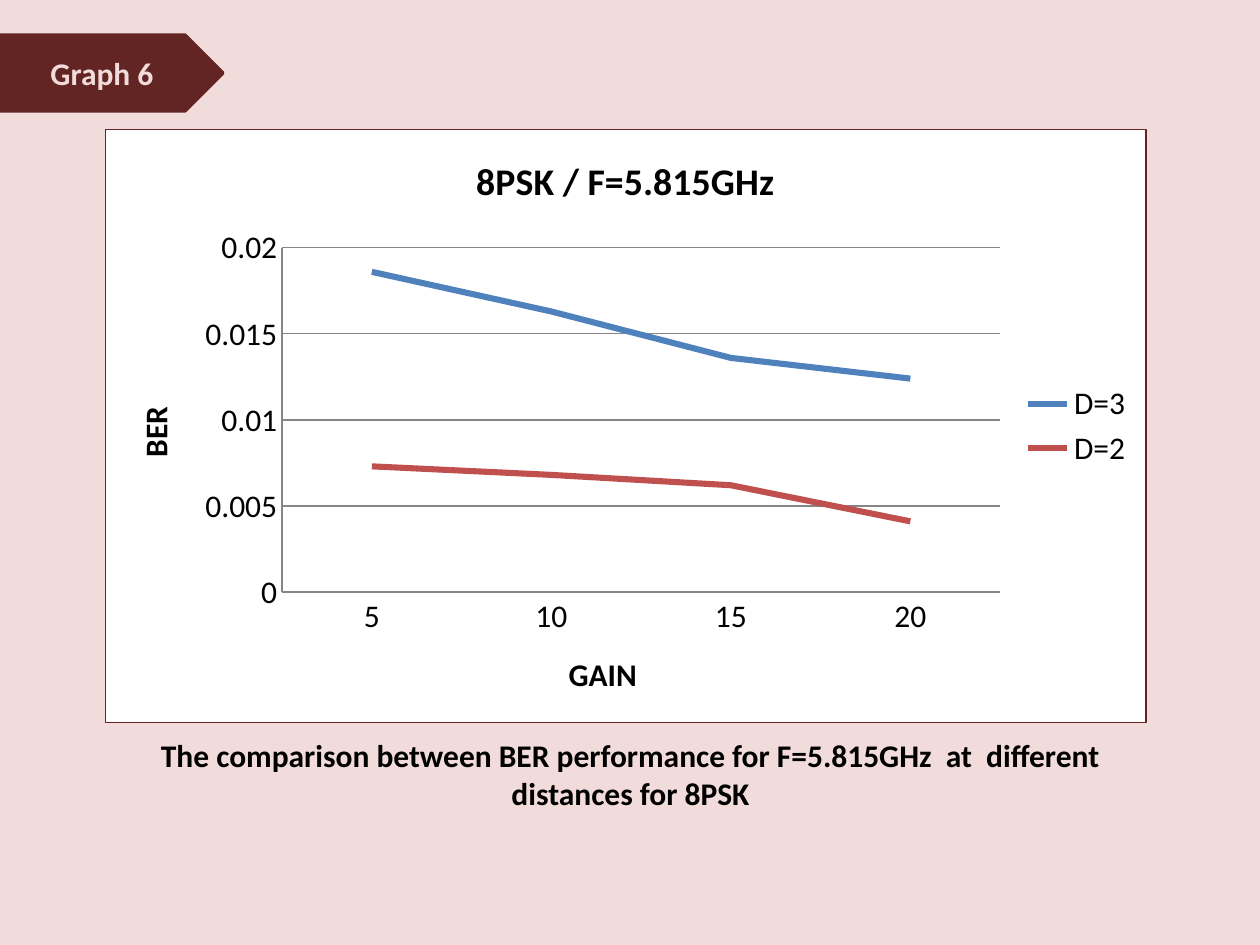
from lxml import etree
from pptx import Presentation
from pptx.chart.data import CategoryChartData
from pptx.dml.color import RGBColor
from pptx.enum.chart import XL_CHART_TYPE, XL_LEGEND_POSITION, XL_TICK_MARK
from pptx.enum.shapes import MSO_SHAPE
from pptx.enum.text import MSO_ANCHOR, PP_ALIGN
from pptx.oxml import parse_xml
from pptx.oxml.ns import nsdecls, qn
from pptx.util import Inches, Pt

FONT = "Calibri"
PINK = RGBColor(0xF2, 0xDC, 0xDB)
MAROON = RGBColor(0x63, 0x25, 0x23)
BLACK = RGBColor(0, 0, 0)
WHITE = RGBColor(0xFF, 0xFF, 0xFF)
GRAY = RGBColor(0x86, 0x86, 0x86)
BLUE = RGBColor(0x4F, 0x81, 0xBD)
RED = RGBColor(0xC0, 0x50, 0x4D)

GAINS = ["5", "10", "15", "20"]
SERIES = [
    ("D=3", [0.0186, 0.0163, 0.0136, 0.0124], BLUE),
    ("D=2", [0.0073, 0.0068, 0.0062, 0.0041], RED),
]


def style_font(font, color=BLACK, size=18, bold=True):
    font.name = FONT
    font.size = Pt(size)
    font.bold = bold
    font.color.rgb = color


def write(frame, text, color):
    frame.word_wrap = True
    para = frame.paragraphs[0]
    para.alignment = PP_ALIGN.CENTER
    span = para.add_run()
    span.text = text
    style_font(span.font, color)


def add_block(page, kind, left, top, width, height, fill):
    block = page.shapes.add_shape(
        kind, Inches(left), Inches(top), Inches(width), Inches(height))
    block.shadow.inherit = False
    block.fill.solid()
    block.fill.fore_color.rgb = fill
    block.line.fill.background()
    return block


def add_tag(page, text):
    tag = add_block(page, MSO_SHAPE.PENTAGON, 0, 0.28, 1.77, 0.6, MAROON)
    tag.line.color.rgb = MAROON
    tag.line.width = Pt(2)
    tag.text_frame.vertical_anchor = MSO_ANCHOR.MIDDLE
    write(tag.text_frame, text, PINK)


def add_caption(page, text):
    box = page.shapes.add_textbox(
        Inches(0.87), Inches(5.79), Inches(8.27), Inches(0.75))
    write(box.text_frame, text, BLACK)


def set_title(owner, text, size=18):
    frame = (owner.chart_title if hasattr(owner, "chart_title")
             else owner.axis_title).text_frame
    span = frame.paragraphs[0].add_run()
    span.text = text
    style_font(span.font, size=size)


def style_axis(axis, title):
    axis.major_tick_mark = XL_TICK_MARK.NONE
    axis.minor_tick_mark = XL_TICK_MARK.NONE
    axis.format.line.color.rgb = GRAY
    style_font(axis.tick_labels.font, bold=False)
    set_title(axis, title)


def frame_chart(chart):
    """Give the chart area its white fill and thin border."""
    area = parse_xml(
        f'<c:spPr {nsdecls("c", "a")}>'
        f'<a:solidFill><a:srgbClr val="{WHITE}"/></a:solidFill>'
        f'<a:ln w="{Pt(0.75)}"><a:solidFill><a:srgbClr val="{MAROON}"/>'
        '</a:solidFill></a:ln></c:spPr>')
    chart.element.find(qn("c:chart")).addnext(area)


def place_plot(chart, **shares):
    """Fix the inner plot area as shares of the chart's size."""
    plot_area = chart.element.find(qn("c:chart")).find(qn("c:plotArea"))
    for old in plot_area.findall(qn("c:layout")):
        plot_area.remove(old)
    layout = etree.Element(qn("c:layout"))
    manual = etree.SubElement(layout, qn("c:manualLayout"))
    settings = {"layoutTarget": "inner", "xMode": "edge", "yMode": "edge", **shares}
    for name, value in settings.items():
        etree.SubElement(manual, qn(f"c:{name}")).set("val", str(value))
    plot_area.insert(0, layout)


def add_ber_chart(page):
    data = CategoryChartData()
    data.categories = GAINS
    for name, values, _ in SERIES:
        data.add_series(name, values)
    chart = page.shapes.add_chart(
        XL_CHART_TYPE.LINE, Inches(0.83), Inches(1.02),
        Inches(8.27), Inches(4.72), data).chart
    style_font(chart.font, bold=False)
    frame_chart(chart)
    place_plot(chart, x=0.17, y=0.2, w=0.69, h=0.58)
    set_title(chart, "8PSK / F=5.815GHz", 21.6)

    # Axes
    style_axis(chart.category_axis, "GAIN")
    scale = chart.value_axis
    style_axis(scale, "BER")
    scale.minimum_scale, scale.maximum_scale, scale.major_unit = 0, 0.02, 0.005
    scale.has_major_gridlines = True
    scale.major_gridlines.format.line.color.rgb = GRAY

    # Legend
    chart.has_legend = True
    chart.legend.position = XL_LEGEND_POSITION.RIGHT
    chart.legend.include_in_layout = False
    style_font(chart.legend.font, bold=False)

    # Lines
    plot = chart.plots[0]
    plot.vary_by_categories = False
    for line, (_, _, color) in zip(plot.series, SERIES):
        line.smooth = False
        line.format.line.color.rgb = color
        line.format.line.width = Pt(3.5)


def main():
    deck = Presentation()
    deck.slide_width, deck.slide_height = Inches(10), Inches(7.5)
    page = deck.slides.add_slide(deck.slide_layouts[6])
    add_block(page, MSO_SHAPE.RECTANGLE, 0, 0, 10, 7.5, PINK)
    add_ber_chart(page)
    add_caption(page, "The comparison between BER performance for F=5.815GHz  at  "
                      "different distances for 8PSK")
    add_tag(page, "Graph 6")
    deck.save("out.pptx")


if __name__ == "__main__":
    main()
